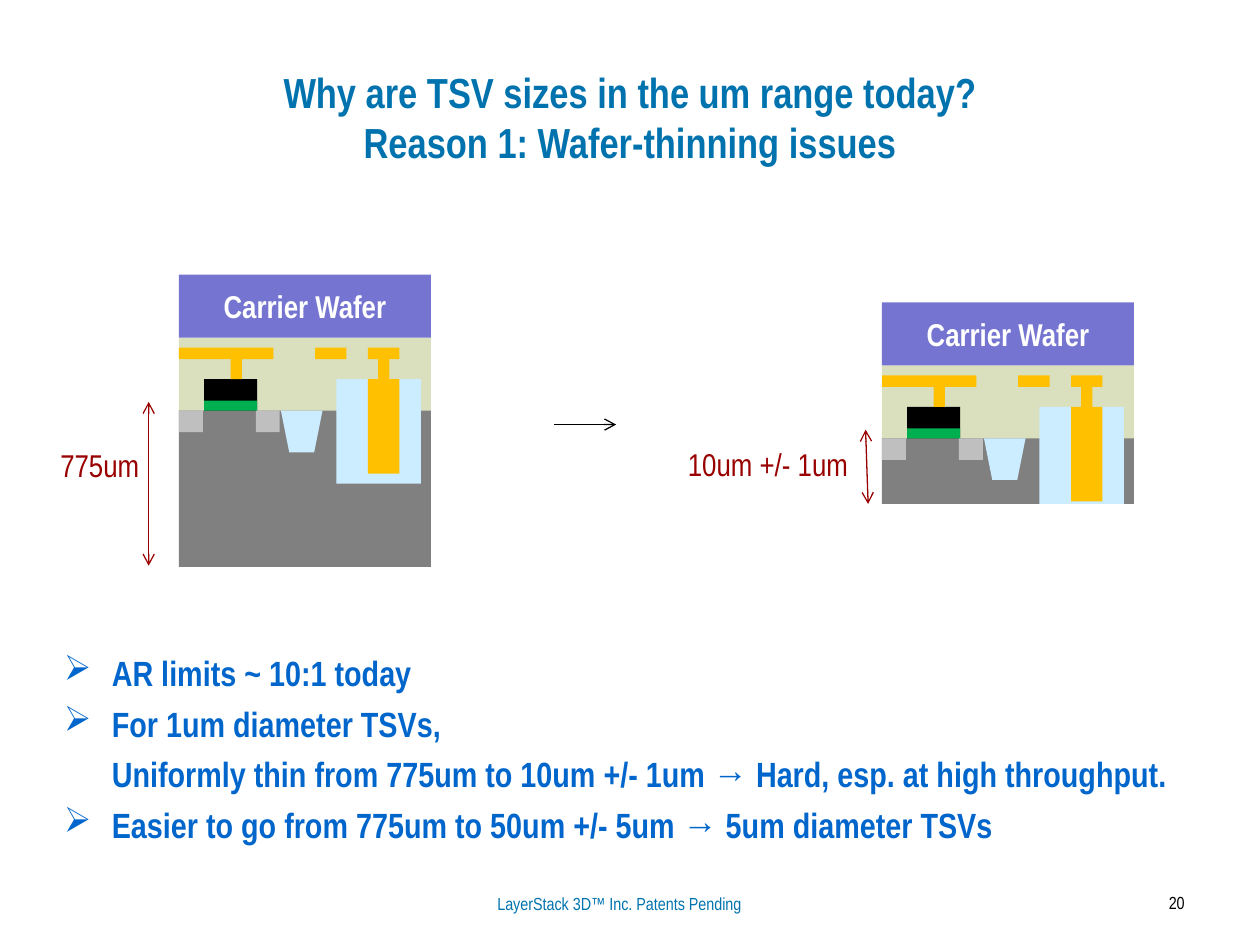
from lxml import etree
from pptx import Presentation
from pptx.dml.color import RGBColor
from pptx.enum.shapes import MSO_CONNECTOR, MSO_SHAPE
from pptx.enum.text import MSO_ANCHOR, PP_ALIGN
from pptx.oxml.ns import qn
from pptx.util import Inches, Pt

RECT = MSO_SHAPE.RECTANGLE
TRENCH = MSO_SHAPE.FLOWCHART_MANUAL_OPERATION
STRAIGHT = MSO_CONNECTOR.STRAIGHT
TOP, MIDDLE = MSO_ANCHOR.TOP, MSO_ANCHOR.MIDDLE
LEFT, CENTER, RIGHT = PP_ALIGN.LEFT, PP_ALIGN.CENTER, PP_ALIGN.RIGHT

TEAL = RGBColor(0x00, 0x73, 0xAE)
BLUE = RGBColor(0x00, 0x66, 0xCC)
RED = RGBColor(0x99, 0x00, 0x00)
BLACK = RGBColor(0x00, 0x00, 0x00)
WHITE = RGBColor(0xFF, 0xFF, 0xFF)
OXIDE = RGBColor(0xDA, 0xE0, 0xBE)
SILICON = RGBColor(0x80, 0x80, 0x80)
DOPED = RGBColor(0xBF, 0xBF, 0xBF)
GREEN = RGBColor(0x00, 0xB0, 0x50)
LINER = RGBColor(0xCC, 0xEC, 0xFF)
METAL = RGBColor(0xFF, 0xC0, 0x00)
CARRIER = RGBColor(0x75, 0x75, 0xD1)
FONT = "Arial Narrow"

prs = Presentation()
prs.slide_width, prs.slide_height = Inches(10), Inches(7.5)
slide = prs.slides.add_slide(prs.slide_layouts[6])
shapes = slide.shapes


def write(para, text, size, color, bold=False, align=LEFT):
    para.alignment = align
    run = para.add_run()
    run.text = text
    font = run.font
    font.name, font.size, font.bold = FONT, Pt(size), bold
    font.color.rgb = color


def add_frame(x, y, w, h, anchor=TOP):
    frame = shapes.add_textbox(Inches(x), Inches(y), Inches(w), Inches(h)).text_frame
    frame.word_wrap = True
    frame.vertical_anchor = anchor
    return frame


# Title
para = add_frame(0.5, 0.3, 9, 1.25, MIDDLE).paragraphs[0]
write(para, "Why are TSV sizes in the um range today?", 24, TEAL, True, CENTER)
para.add_line_break()
write(para, "Reason 1: Wafer-thinning issues", 24, TEAL, True, CENTER)

# Bullets
points = [
    ("➢", "AR limits ~ 10:1 today"),
    ("➢", "For 1um diameter TSVs,"),
    ("", "Uniformly thin from 775um to 10um +/- 1um → Hard, esp. at high throughput."),
    ("➢", "Easier to go from 775um to 50um +/- 5um → 5um diameter TSVs"),
]
frame = add_frame(0.41, 5.12, 9.5, 2.34)
for i, (mark, text) in enumerate(points):
    para = frame.add_paragraph() if i else frame.paragraphs[0]
    if i:
        para.space_before = Pt(5)
    props = para._p.get_or_add_pPr()
    props.set("marL", str(Inches(0.38)))
    if mark:
        props.set("indent", str(Inches(-0.38)))
        etree.SubElement(props, qn("a:buChar")).set("char", mark)
    write(para, text, 20, BLUE, True)

# Wafer stacks: left, top, silicon depth, liner depth
for left, top, depth, liner in [(1.42, 2.18, 1.24, 0.83), (7, 2.4, 0.52, 0.77)]:
    parts = [
        (RECT, 0, 0.5, 2, 0.59, OXIDE),
        (RECT, 0, 1.08, 2, depth, SILICON),
        (RECT, 0.2, 0.83, 0.42, 0.25, BLACK),
        (RECT, 0.2, 1, 0.42, 0.08, GREEN),
        (TRENCH, 0.81, 1.08, 0.33, 0.33, LINER),
        (RECT, 0.61, 1.08, 0.19, 0.17, DOPED),
        (RECT, 0, 1.08, 0.19, 0.17, DOPED),
        (RECT, 1.25, 0.83, 0.67, liner, LINER),
        (RECT, 1.5, 0.83, 0.25, 0.75, METAL),
        (RECT, 0, 0.58, 0.75, 0.09, METAL),
        (RECT, 0.41, 0.66, 0.09, 0.17, METAL),
        (RECT, 1.08, 0.58, 0.25, 0.09, METAL),
        (RECT, 1.5, 0.58, 0.25, 0.09, METAL),
        (RECT, 1.58, 0.66, 0.09, 0.17, METAL),
        (RECT, 0, 0, 2, 0.5, CARRIER),
    ]
    for kind, x, y, w, h, color in parts:
        part = shapes.add_shape(kind, Inches(left + x), Inches(top + y), Inches(w), Inches(h))
        part.shadow.inherit = False
        part.fill.solid()
        part.fill.fore_color.rgb = color
        part.line.fill.background()
    # The carrier is the last part of each stack
    part.text_frame.vertical_anchor = MIDDLE
    write(part.text_frame.paragraphs[0], "Carrier Wafer", 18, WHITE, True, CENTER)

# Arrows
arrows = [
    (1.18, 3.19, 1.18, 4.49, RED, ("headEnd", "tailEnd")),
    (4.4, 3.37, 4.89, 3.37, BLACK, ("tailEnd",)),
    (6.87, 3.41, 6.89, 4, RED, ("headEnd", "tailEnd")),
]
for x1, y1, x2, y2, color, ends in arrows:
    arrow = shapes.add_connector(STRAIGHT, Inches(x1), Inches(y1), Inches(x2), Inches(y2))
    arrow.line.color.rgb = color
    arrow.line.width = Pt(0.75)
    for end in ends:
        etree.SubElement(arrow.line._get_or_add_ln(), qn("a:" + end)).set("type", "arrow")
    etree.SubElement(arrow._element.spPr, qn("a:effectLst"))

# Thickness labels, footer and page number
labels = [
    (0.38, 3.49, 0.95, 0.4, "775um", 18, RED, LEFT),
    (5.03, 3.48, 2.13, 0.4, "10um +/- 1um", 18, RED, CENTER),
    (3.33, 7.04, 3.17, 0.26, "LayerStack 3D™ Inc. Patents Pending", 10, TEAL, CENTER),
    (8.39, 7.03, 1.11, 0.33, "20", 10, BLACK, RIGHT),
]
for x, y, w, h, text, size, color, align in labels:
    write(add_frame(x, y, w, h).paragraphs[0], text, size, color, align=align)

prs.save("out.pptx")
